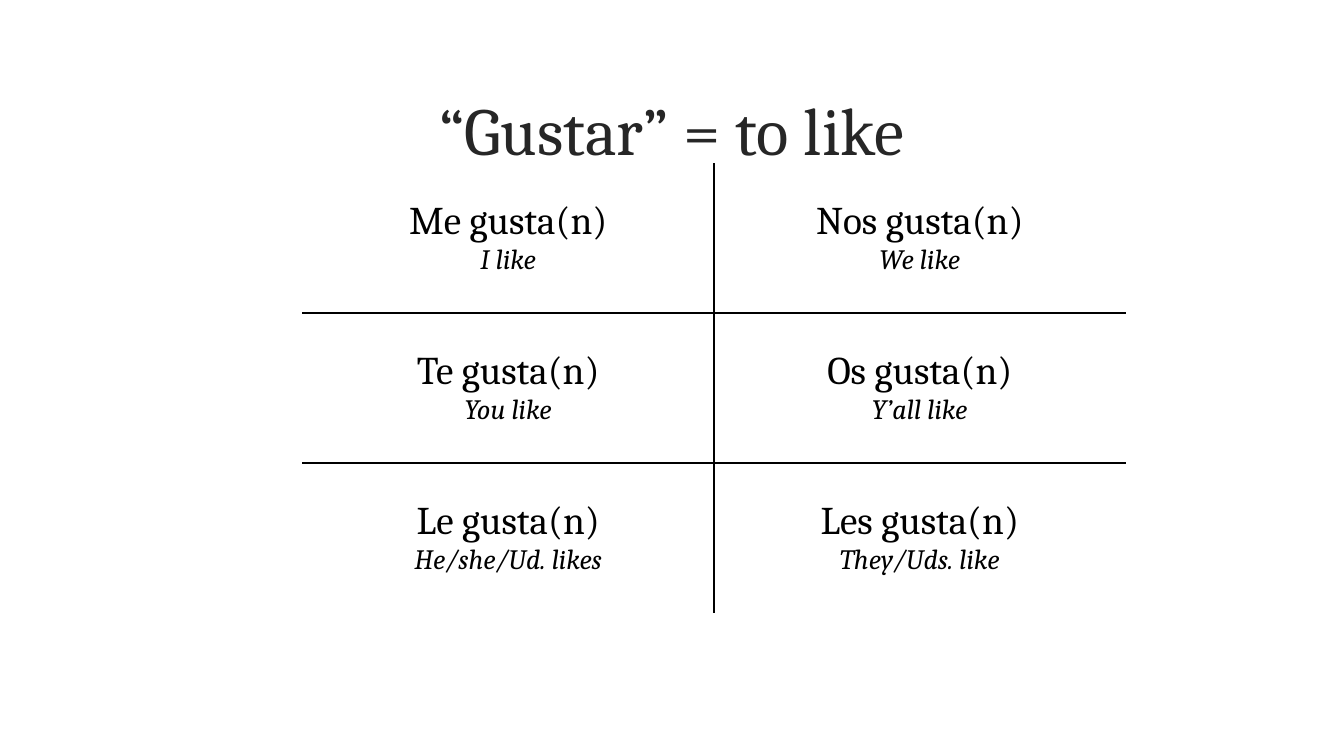
import pptx
import pptx.dml.color
import pptx.enum.text
import pptx.util
from lxml import etree

Pt = pptx.util.Pt
RGB = pptx.dml.color.RGBColor
CENTER = pptx.enum.text.PP_ALIGN.CENTER
MIDDLE = pptx.enum.text.MSO_ANCHOR.MIDDLE
NS = "http://schemas.openxmlformats.org/drawingml/2006/main"
COLORS = {"title": "262626", "text": "000000", "grid": "000000"}
FORMS = [
    [("Me gusta(n)", "I like"), ("Nos gusta(n)", "We like")],
    [("Te gusta(n)", "You like"), ("Os gusta(n)", "Y’all like")],
    [("Le gusta(n)", "He/she/Ud. likes"), ("Les gusta(n)", "They/Uds. like")],
]
COL_W, ROW_H = 294, 107.1


def write(p, text, size, color="text", italic=False):
    p.alignment = CENTER
    r = p.add_run()
    r.text = text
    r.font.name = "Cambria"
    r.font.size = Pt(size)
    r.font.italic = italic
    r.font.color.rgb = RGB.from_string(COLORS[color])


def set_border(cell, side, visible):
    """Draw one side (L, R, T or B) as a thin grid line, or leave it empty."""
    ln = etree.SubElement(cell._tc.get_or_add_tcPr(), f"{{{NS}}}ln{side}", w=str(Pt(1)))
    if visible:
        fill = etree.SubElement(ln, f"{{{NS}}}solidFill")
        etree.SubElement(fill, f"{{{NS}}}srgbClr", val=COLORS["grid"])
    else:
        etree.SubElement(ln, f"{{{NS}}}noFill")


prs = pptx.Presentation()
prs.slide_width, prs.slide_height = Pt(960), Pt(540)
s = prs.slides.add_slide(prs.slide_layouts[6])

# Conjugation table with inner grid lines only
n_rows, n_cols = len(FORMS), len(FORMS[0])
table = s.shapes.add_table(n_rows, n_cols, Pt(216), Pt(116.5),
                           Pt(COL_W * n_cols), Pt(ROW_H * n_rows)).table
table.first_row = table.horz_banding = False
for col in table.columns:
    col.width = Pt(COL_W)
for row in table.rows:
    row.height = Pt(ROW_H)

for i, forms in enumerate(FORMS):
    for j, (spanish, english) in enumerate(forms):
        cell = table.cell(i, j)
        cell.vertical_anchor = MIDDLE
        inner = {"L": j > 0, "R": j < n_cols - 1, "T": i > 0, "B": i < n_rows - 1}
        for side, visible in inner.items():
            set_border(cell, side, visible)
        cell.fill.background()
        tf = cell.text_frame
        write(tf.paragraphs[0], spanish, 28)
        write(tf.add_paragraph(), english, 20, italic=True)

# Title
tf = s.shapes.add_textbox(Pt(57.6), Pt(34.6), Pt(844.6), Pt(113.8)).text_frame
tf.word_wrap = True
tf.vertical_anchor = MIDDLE
write(tf.paragraphs[0], "“Gustar” = to like", 48, color="title")

prs.save("out.pptx")
